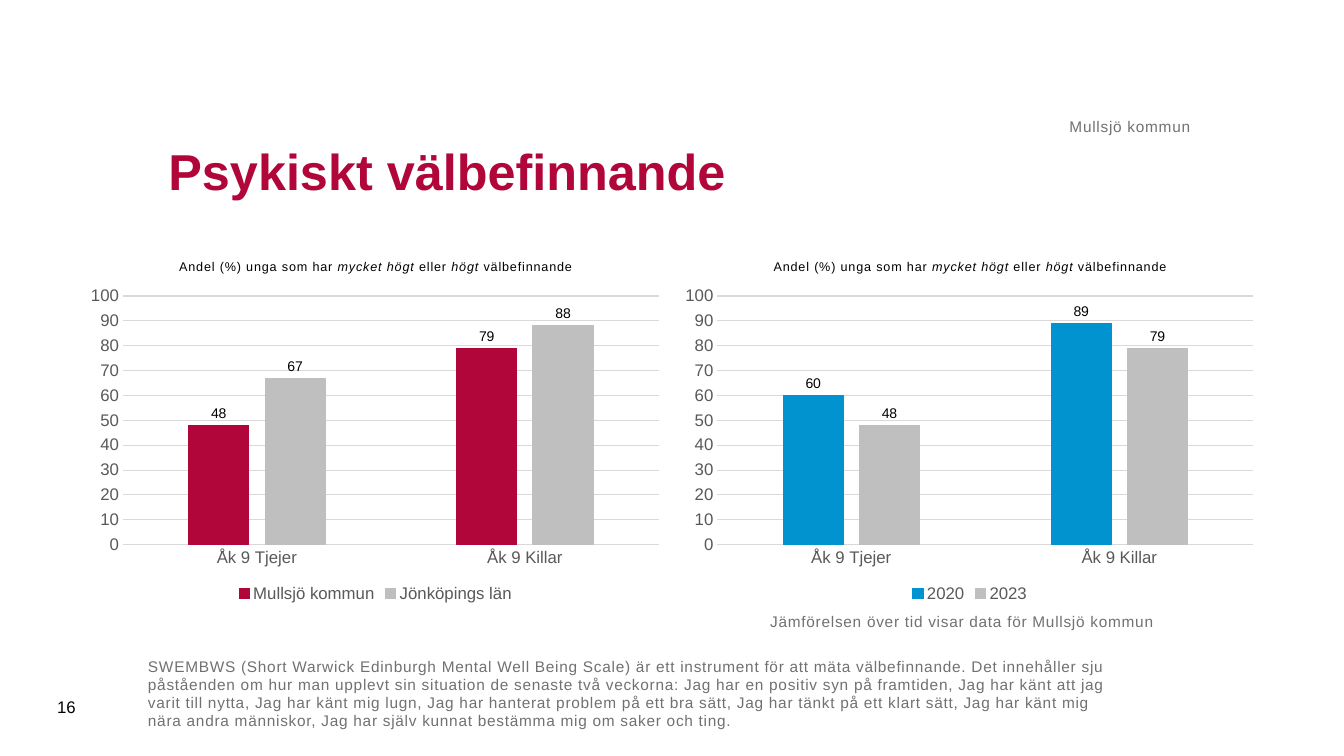
from dataclasses import dataclass

from lxml import etree
from pptx import Presentation
from pptx import util as u
from pptx.chart.data import CategoryChartData
from pptx.dml.color import RGBColor
from pptx.enum import chart as ch, text
from pptx.oxml.ns import qn

FONT = "Arial"
BLACK, GREY, AXIS = "000000", "717171", "595959"
RED, BLUE, SILVER, GRID = "B1063A", "0093D0", "BFBFBF", "D9D9D9"
NUMBERS = "#,##0;#,##0"
CATEGORIES = ["Åk 9 Tjejer", "Åk 9 Killar"]
CHART_TITLE = [("Andel (%) unga som har ", False), ("mycket högt", True),
               (" eller ", False), ("högt", True), (" välbefinnande", False)]
PLOT_AREA = {"x": 0.073, "y": 0.148, "w": 0.906, "h": 0.682}


@dataclass
class Series:
    name: str
    values: list[int]
    color: str


@dataclass
class BarChart:
    left: float
    series: list[Series]


@dataclass
class Note:
    text: str
    left: float
    top: float
    width: float
    height: float
    size: float = 11
    color: str = GREY
    spacing: float = 0.5
    inset: float = 0
    align: text.PP_ALIGN = text.PP_ALIGN.LEFT
    anchor: text.MSO_ANCHOR = text.MSO_ANCHOR.TOP
    leading: float | None = None


CHARTS = [
    BarChart(2.01, [Series("Mullsjö kommun", [48, 79], RED),
                    Series("Jönköpings län", [67, 88], SILVER)]),
    BarChart(16.99, [Series("2020", [60, 89], BLUE),
                     Series("2023", [48, 79], SILVER)]),
]
NOTES = [
    Note("Jämförelsen över tid visar data för Mullsjö kommun", 19.41, 15.42, 13.49, 2.39),
    Note("Mullsjö kommun", 3.99, 1.57, 26.01, 1.85,
         align=text.PP_ALIGN.RIGHT, anchor=text.MSO_ANCHOR.BOTTOM),
    Note("16", 1.19, 17.3, 1.45, 1.02, size=12, color=BLACK, spacing=0,
         inset=0.25, anchor=text.MSO_ANCHOR.MIDDLE),
    Note("SWEMBWS (Short Warwick Edinburgh Mental Well Being Scale) är ett instrument för "
         "att mäta välbefinnande. Det innehåller sju påståenden om hur man upplevt sin "
         "situation de senaste två veckorna: Jag har en positiv syn på framtiden, Jag har "
         "känt att jag varit till nytta, Jag har känt mig lugn, Jag har hanterat problem på "
         "ett bra sätt, Jag har tänkt på ett klart sätt, Jag har känt mig nära andra "
         "människor, Jag har själv kunnat bestämma mig om saker och ting.",
         3.73, 16.56, 24.61, 2.39, leading=13),
]


def rgb(color: str) -> RGBColor:
    return RGBColor.from_string(color)


def set_font(font, size: float, color: str, bold: bool = False) -> None:
    font.name, font.size, font.bold = FONT, u.Pt(size), bold
    font.color.rgb = rgb(color)


def set_line(line, color: str) -> None:
    line.color.rgb = rgb(color)
    line.width = u.Pt(0.75)


def add_run(p, words: str, spacing: float):
    r = p.add_run()
    r.text = words
    if spacing:
        r._r.get_or_add_rPr().set("spc", str(round(spacing * 100)))
    return r


def add_title(slide, words: str) -> None:
    sp = slide.shapes.title
    sp.left, sp.top, sp.width, sp.height = u.Cm(3.99), u.Cm(2.49), u.Cm(26.01), u.Cm(3.61)
    tf = sp.text_frame
    tf.text = words
    tf.vertical_anchor = text.MSO_ANCHOR.MIDDLE
    p = tf.paragraphs[0]
    p.alignment = text.PP_ALIGN.LEFT
    set_font(p.font, 36, RED, True)


def add_note(slide, note: Note) -> None:
    sp = slide.shapes.add_textbox(u.Cm(note.left), u.Cm(note.top),
                                  u.Cm(note.width), u.Cm(note.height))
    tf = sp.text_frame
    tf.word_wrap = True
    tf.vertical_anchor = note.anchor
    tf.margin_left = tf.margin_right = u.Cm(note.inset)
    tf.margin_top = tf.margin_bottom = u.Cm(note.inset / 2)
    p = tf.paragraphs[0]
    p.alignment = note.align
    if note.leading:
        p.line_spacing = u.Pt(note.leading)
    add_run(p, note.text, note.spacing)
    set_font(p.font, note.size, note.color)


def set_plot_area(chart) -> None:
    area = chart._chartSpace.chart.plotArea
    for old in area.findall(qn("c:layout")):
        area.remove(old)
    layout = etree.Element(qn("c:layout"))
    area.insert(0, layout)
    manual = etree.SubElement(layout, qn("c:manualLayout"))
    settings = {"layoutTarget": "inner", "xMode": "edge", "yMode": "edge", **PLOT_AREA}
    for name, value in settings.items():
        etree.SubElement(manual, qn(f"c:{name}")).set("val", str(value))


def format_axes(chart) -> None:
    for axis in (chart.category_axis, chart.value_axis):
        axis.major_tick_mark = axis.minor_tick_mark = ch.XL_TICK_MARK.NONE
        set_font(axis.tick_labels.font, 12, AXIS)
    set_line(chart.category_axis.format.line, GRID)
    values = chart.value_axis
    values.minimum_scale, values.maximum_scale, values.major_unit = 0, 100, 10
    values.tick_labels.number_format = NUMBERS
    values.tick_labels.number_format_is_linked = False
    values.format.line.fill.background()
    set_line(values.major_gridlines.format.line, GRID)


def format_series(bars, color: str) -> None:
    bars.invert_if_negative = False
    bars.format.fill.solid()
    bars.format.fill.fore_color.rgb = rgb(color)
    set_line(bars.format.line, color)
    labels = bars.data_labels
    labels.show_value = True
    labels.position = ch.XL_LABEL_POSITION.OUTSIDE_END
    labels.number_format = NUMBERS
    labels.number_format_is_linked = False
    set_font(labels.font, 10, BLACK)


def add_bar_chart(slide, spec_: BarChart) -> None:
    data = CategoryChartData(number_format=NUMBERS)
    data.categories = CATEGORIES
    for s in spec_.series:
        data.add_series(s.name, s.values)
    chart = slide.shapes.add_chart(ch.XL_CHART_TYPE.COLUMN_CLUSTERED, u.Cm(spec_.left),
                                   u.Cm(6.1), u.Cm(14.91), u.Cm(9.19), data).chart
    set_font(chart.font, 10, BLACK)
    p = chart.chart_title.text_frame.paragraphs[0]
    for words, italic in CHART_TITLE:
        add_run(p, words, 0.6).font.italic = italic
    set_font(p.font, 9, BLACK)
    chart.chart_title.include_in_layout = False
    chart.has_legend = True
    chart.legend.position = ch.XL_LEGEND_POSITION.BOTTOM
    chart.legend.include_in_layout = False
    set_font(chart.legend.font, 12, AXIS)
    format_axes(chart)
    plot = chart.plots[0]
    plot.gap_width, plot.overlap, plot.vary_by_categories = 219, -27, False
    for bars, s in zip(plot.series, spec_.series):
        format_series(bars, s.color)
    set_plot_area(chart)


def main() -> None:
    prs = Presentation()
    prs.slide_width, prs.slide_height = u.Cm(33.87), u.Cm(19.05)
    slide = prs.slides.add_slide(prs.slide_layouts[5])
    for bar_chart in CHARTS:
        add_bar_chart(slide, bar_chart)
    add_title(slide, "Psykiskt välbefinnande")
    for note in NOTES:
        add_note(slide, note)
    prs.save("out.pptx")


if __name__ == "__main__":
    main()
